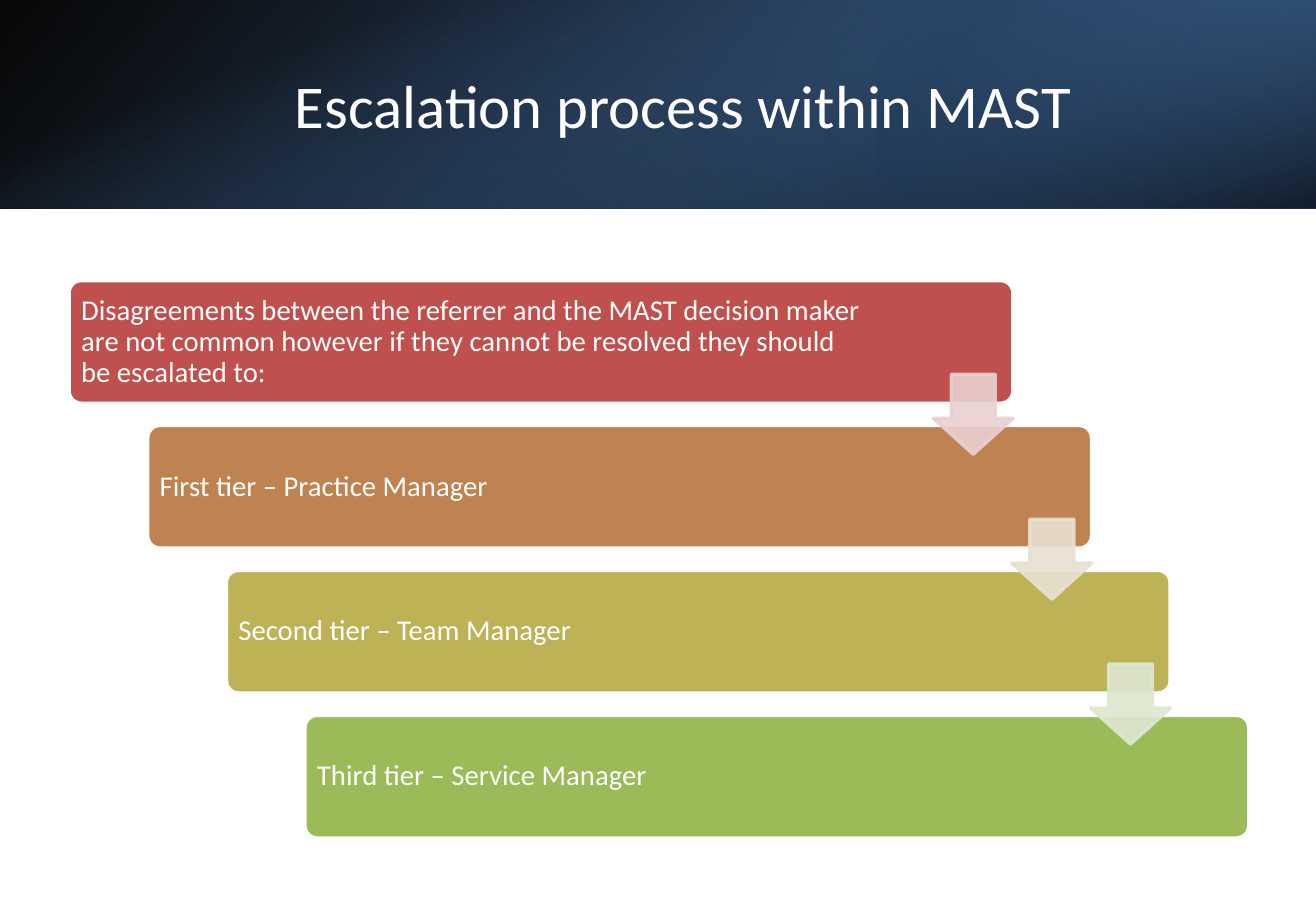
from lxml.etree import SubElement
from pptx import Presentation
from pptx.dml.color import RGBColor
from pptx.enum.shapes import MSO_SHAPE
from pptx.enum.text import MSO_ANCHOR, PP_ALIGN
from pptx.oxml.ns import qn
from pptx.util import Pt

WHITE = RGBColor(0xFF, 0xFF, 0xFF)
BLACK = RGBColor(0x00, 0x00, 0x00)
NAVY = RGBColor(0x25, 0x40, 0x61)
DEEP_BLUE = RGBColor(0x37, 0x60, 0x92)
BLUE = RGBColor(0x4F, 0x81, 0xBD)
RED = RGBColor(0xC0, 0x50, 0x4D)
ORANGE = RGBColor(0xBE, 0x83, 0x51)
OLIVE = RGBColor(0xBD, 0xB2, 0x55)
GREEN = RGBColor(0x9B, 0xBB, 0x59)
PALE_RED = RGBColor(0xE8, 0xD0, 0xD0)
PALE_ORANGE = RGBColor(0xE8, 0xE1, 0xD1)
PALE_GREEN = RGBColor(0xDE, 0xE7, 0xD1)

SLIDE_WIDTH, SLIDE_HEIGHT, BANNER_HEIGHT = 780, 540, 123.8
CARD_LEFT, CARD_TOP, CARD_WIDTH, CARD_HEIGHT = 41, 166.3, 559.4, 72.7
STEP_RIGHT, STEP_DOWN = 46.6, 85.9
ARROW_SIZE, ARROW_RIGHT, ARROW_DOWN = 47.4, 512.2, 55.6

TITLE_FONT = {"name": "Calibri", "size": Pt(36)}
CARD_FONT = {"name": "Calibri", "size": Pt(17)}
TITLE_PARAGRAPH = {"alignment": PP_ALIGN.CENTER}
CARD_PARAGRAPH = {"alignment": PP_ALIGN.LEFT, "line_spacing": 0.9}
TITLE_FRAME = {"word_wrap": True, "vertical_anchor": MSO_ANCHOR.MIDDLE}
CARD_FRAME = {
    **TITLE_FRAME,
    "margin_left": Pt(5),
    "margin_top": Pt(5),
    "margin_right": Pt(85.5),
    "margin_bottom": Pt(5),
}

STEPS = [
    ("Disagreements between the referrer and the MAST decision maker are not common "
     "however if they cannot be resolved they should be escalated to:", RED),
    ("First tier – Practice Manager", ORANGE),
    ("Second tier – Team Manager", OLIVE),
    ("Third tier – Service Manager", GREEN),
]
ARROW_COLORS = [PALE_RED, PALE_ORANGE, PALE_GREEN]


def apply_format(target, values):
    """Set each named attribute of the target."""
    for name, value in values.items():
        setattr(target, name, value)


def set_opacity(shape, percents):
    """Give the colours of a shape their opacity, in document order."""
    colors = shape._element.spPr.iter(qn("a:srgbClr"))
    for color, percent in zip(colors, percents):
        SubElement(color, qn("a:alpha")).set("val", str(percent * 1000))


def add_plain_shape(slide, kind, box, adjustments=()):
    """Add a preset shape without a shadow."""
    shape = slide.shapes.add_shape(kind, *map(Pt, box))
    shape.shadow.inherit = False
    for index, value in enumerate(adjustments):
        shape.adjustments[index] = value
    return shape


def set_solid(shape, fill_color, line_color):
    """Give a shape a solid fill and a two-point outline."""
    shape.fill.solid()
    shape.fill.fore_color.rgb = fill_color
    shape.line.color.rgb = line_color
    shape.line.width = Pt(2)


def add_gradient_panel(slide, box, angle, stops, rotation=0, flipped=False):
    """Add a rectangle with a translucent clockwise-angled gradient."""
    panel = add_plain_shape(slide, MSO_SHAPE.RECTANGLE, box)
    panel.rotation = rotation
    if flipped:
        panel._element.spPr.xfrm.set("flipH", "1")
    panel.line.fill.background()
    panel.fill.gradient()
    panel.fill.gradient_angle = 360 - angle
    for stop, (position, color, _) in zip(panel.fill.gradient_stops, stops):
        stop.position = position
        stop.color.rgb = color
    set_opacity(panel, [opacity for _, _, opacity in stops])


def write_text(shape, text, frame_format, paragraph_format, font_format):
    """Write one white paragraph into a shape."""
    frame = shape.text_frame
    apply_format(frame, frame_format)
    paragraph = frame.paragraphs[0]
    apply_format(paragraph, paragraph_format)
    run = paragraph.add_run()
    run.text = text
    apply_format(run.font, font_format)
    run.font.color.rgb = WHITE


def add_banner(slide):
    """Layer the three gradients and the title at the top."""
    add_gradient_panel(slide, (0, 0, SLIDE_WIDTH, BANNER_HEIGHT), 140,
                       [(0, BLACK, 96), (1, DEEP_BLUE, 96)], flipped=True)
    add_gradient_panel(slide, (520, 0, 260, BANNER_HEIGHT), 320,
                       [(0.19, NAVY, 68), (1, BLUE, 79)], rotation=180, flipped=True)
    offset = (SLIDE_WIDTH - BANNER_HEIGHT) / 2
    add_gradient_panel(slide, (offset, -offset, BANNER_HEIGHT, SLIDE_WIDTH), 340,
                       [(0.23, BLUE, 0), (0.99, BLACK, 74)], rotation=90)
    title = slide.shapes.add_textbox(Pt(88), Pt(27.4), Pt(642), Pt(69))
    write_text(title, "Escalation process within MAST ", TITLE_FRAME, TITLE_PARAGRAPH, TITLE_FONT)


def add_card(slide, index, text, color):
    """Add one card of the staircase."""
    box = (CARD_LEFT + index * STEP_RIGHT, CARD_TOP + index * STEP_DOWN, CARD_WIDTH, CARD_HEIGHT)
    card = add_plain_shape(slide, MSO_SHAPE.ROUNDED_RECTANGLE, box, [0.1])
    set_solid(card, color, WHITE)
    write_text(card, text, CARD_FRAME, CARD_PARAGRAPH, CARD_FONT)


def add_arrow(slide, index, color):
    """Add the arrow from one card to the next."""
    left = CARD_LEFT + ARROW_RIGHT + index * STEP_RIGHT
    top = CARD_TOP + ARROW_DOWN + index * STEP_DOWN
    box = (left, top, ARROW_SIZE, ARROW_SIZE)
    arrow = add_plain_shape(slide, MSO_SHAPE.DOWN_ARROW, box, [0.55, 0.45])
    set_solid(arrow, color, color)
    set_opacity(arrow, [90, 90])


def main():
    """Build the escalation slide and save it."""
    presentation = Presentation()
    apply_format(presentation, {"slide_width": Pt(SLIDE_WIDTH), "slide_height": Pt(SLIDE_HEIGHT)})
    slide = presentation.slides.add_slide(presentation.slide_layouts[6])
    add_banner(slide)
    for index, (text, color) in enumerate(STEPS):
        add_card(slide, index, text, color)
    for index, color in enumerate(ARROW_COLORS):
        add_arrow(slide, index, color)
    presentation.save("out.pptx")


if __name__ == "__main__":
    main()
